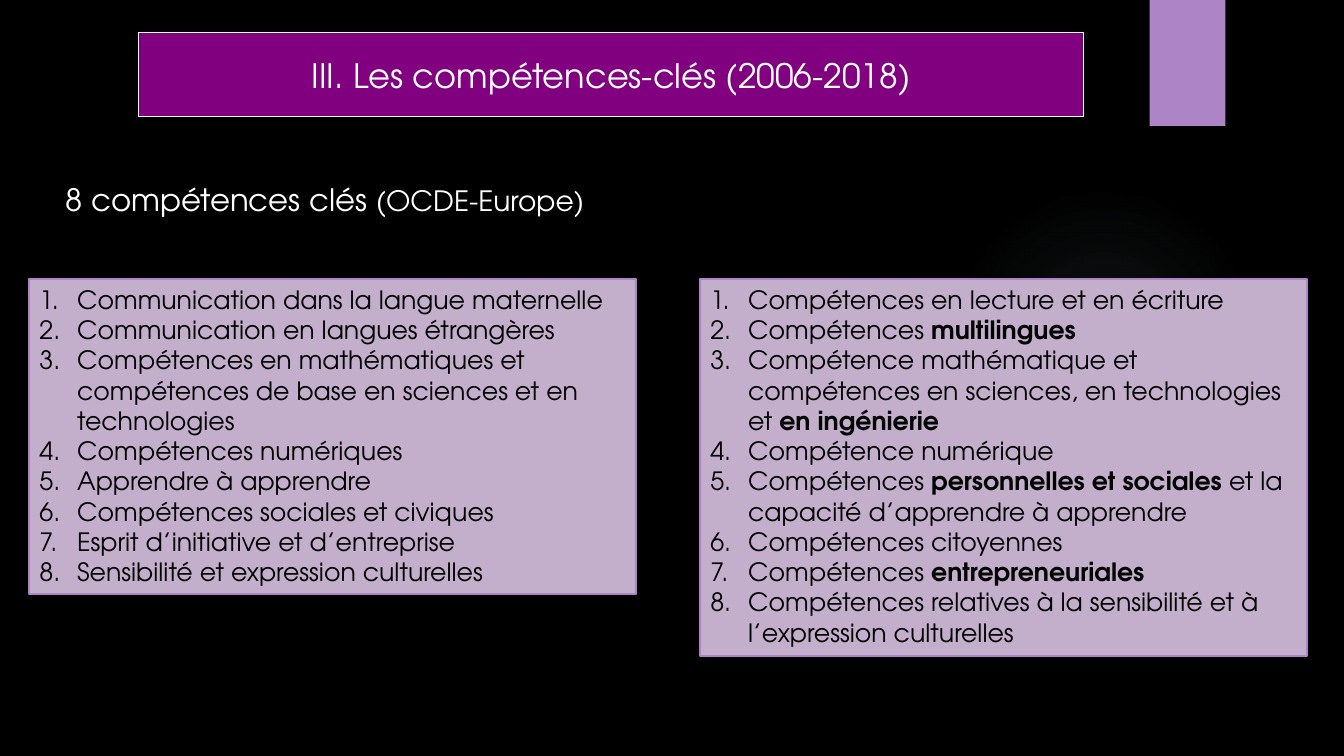
import pptx
import pptx.util
import pptx.dml.color
import pptx.enum.shapes
import pptx.enum.text
import pptx.oxml
import pptx.oxml.ns

RGB = pptx.dml.color.RGBColor
BLACK = RGB(0x00, 0x00, 0x00)
WHITE = RGB(0xFF, 0xFF, 0xFF)
PURPLE = RGB(0x80, 0x00, 0x80)
LILAC = RGB(0xAD, 0x84, 0xC6)
PALE = RGB(0xC3, 0xAF, 0xCC)
TEAL = RGB(0x84, 0xAC, 0xB6)
FONT = "TeX Gyre Adventor"
SCALE = 9525
INDENT = 36
KINDS = pptx.enum.shapes.MSO_SHAPE
ANCHOR = pptx.enum.text.MSO_ANCHOR
ALIGN = pptx.enum.text.PP_ALIGN
GROW = pptx.enum.text.MSO_AUTO_SIZE.SHAPE_TO_FIT_TEXT

OLD = [
    "Communication dans la langue maternelle",
    "Communication en langues étrangères",
    "Compétences en mathématiques et compétences de base en sciences et en technologies",
    "Compétences numériques",
    "Apprendre à apprendre",
    "Compétences sociales et civiques",
    "Esprit d’initiative et d’entreprise",
    "Sensibilité et expression culturelles",
]
NEW = [
    "Compétences en lecture et en écriture",
    "Compétences *multilingues",
    "Compétence mathématique et compétences en sciences, en technologies et *en ingénierie",
    "Compétence numérique",
    "Compétences *personnelles et sociales *et la capacité d’apprendre à apprendre",
    "Compétences citoyennes",
    "Compétences *entrepreneuriales",
    "Compétences relatives à la sensibilité et à l’expression culturelles",
]


def px(count):
    return pptx.util.Emu(count * SCALE)


def style(run, size, color, bold=False):
    run.font.name = FONT
    run.font.size = pptx.util.Pt(size)
    run.font.color.rgb = color
    run.font.bold = bold


def paint(shape, fill, line=None, width=0):
    shape.fill.solid()
    shape.fill.fore_color.rgb = fill
    if line is None:
        shape.line.fill.background()
    else:
        shape.line.color.rgb = line
        shape.line.width = pptx.util.Pt(width)


def add_shape(slide, kind, box):
    shape = slide.shapes.add_shape(kind, *map(px, box))
    shape.shadow.inherit = False
    return shape


def add_glow(slide, box):
    glow = add_shape(slide, KINDS.OVAL, box)
    paint(glow, TEAL)
    stops = "".join(
        f'<a:gs pos="{pos * 1000}"><a:srgbClr val="{TEAL}">'
        f'<a:alpha val="{alpha * 1000}"/></a:srgbClr></a:gs>'
        for pos, alpha in [(0, 7), (36, 6), (69, 0), (100, 0)]
    )
    grad = pptx.oxml.parse_xml(
        '<a:gradFill xmlns:a="http://schemas.openxmlformats.org/drawingml/2006/main">'
        f'<a:gsLst>{stops}</a:gsLst><a:path path="circle">'
        '<a:fillToRect l="50000" t="50000" r="50000" b="50000"/></a:path></a:gradFill>'
    )
    props = glow.element.spPr
    props.replace(props.find(pptx.oxml.ns.qn("a:solidFill")), grad)


def add_title(slide, box):
    title = slide.shapes.title
    title.left, title.top, title.width, title.height = map(px, box)
    paint(title, PURPLE, WHITE, 0.75)
    frame = title.text_frame
    frame.text = "III. Les compétences-clés (2006-2018)"
    frame.auto_size = GROW
    frame.vertical_anchor = ANCHOR.MIDDLE
    frame.paragraphs[0].alignment = ALIGN.CENTER
    style(frame.paragraphs[0].runs[0], 24, WHITE)


def add_lead(slide, box):
    frame = slide.shapes.add_textbox(*map(px, box)).text_frame
    frame.word_wrap = True
    frame.auto_size = GROW
    for text, size in [("8 compétences clés ", 22), ("(OCDE-Europe)", 20)]:
        run = frame.paragraphs[0].add_run()
        run.text = text
        style(run, size, WHITE)


def add_list(slide, box, items):
    panel = add_shape(slide, KINDS.RECTANGLE, box)
    paint(panel, PALE, LILAC, 1.5)
    frame = panel.text_frame
    frame.word_wrap = True
    frame.auto_size = GROW
    frame.vertical_anchor = ANCHOR.TOP
    for i, item in enumerate(items):
        para = frame.add_paragraph() if i else frame.paragraphs[0]
        para.alignment = ALIGN.LEFT
        props = para._p.get_or_add_pPr()
        props.set("marL", str(px(INDENT)))
        props.set("indent", str(-px(INDENT)))
        mark = pptx.oxml.ns.qn("a:buAutoNum")
        props.append(props.makeelement(mark, {"type": "arabicPeriod"}))
        for j, text in enumerate(item.split("*")):
            run = para.add_run()
            run.text = text
            style(run, 18, BLACK, j % 2 == 1)


def main():
    deck = pptx.Presentation()
    deck.slide_width, deck.slide_height = px(1280), px(720)
    slide = deck.slides.add_slide(deck.slide_layouts[5])
    slide.background.fill.solid()
    slide.background.fill.fore_color.rgb = BLACK
    add_glow(slide, (903, 176, 296, 296))
    paint(add_shape(slide, KINDS.RECTANGLE, (1095, 0, 72, 120)), LILAC)
    add_title(slide, (132, 47, 900, 48))
    add_lead(slide, (53, 167, 884, 45))
    add_list(slide, (28, 266, 578, 300), OLD)
    add_list(slide, (667, 266, 578, 359), NEW)
    deck.save("out.pptx")


if __name__ == "__main__":
    main()
